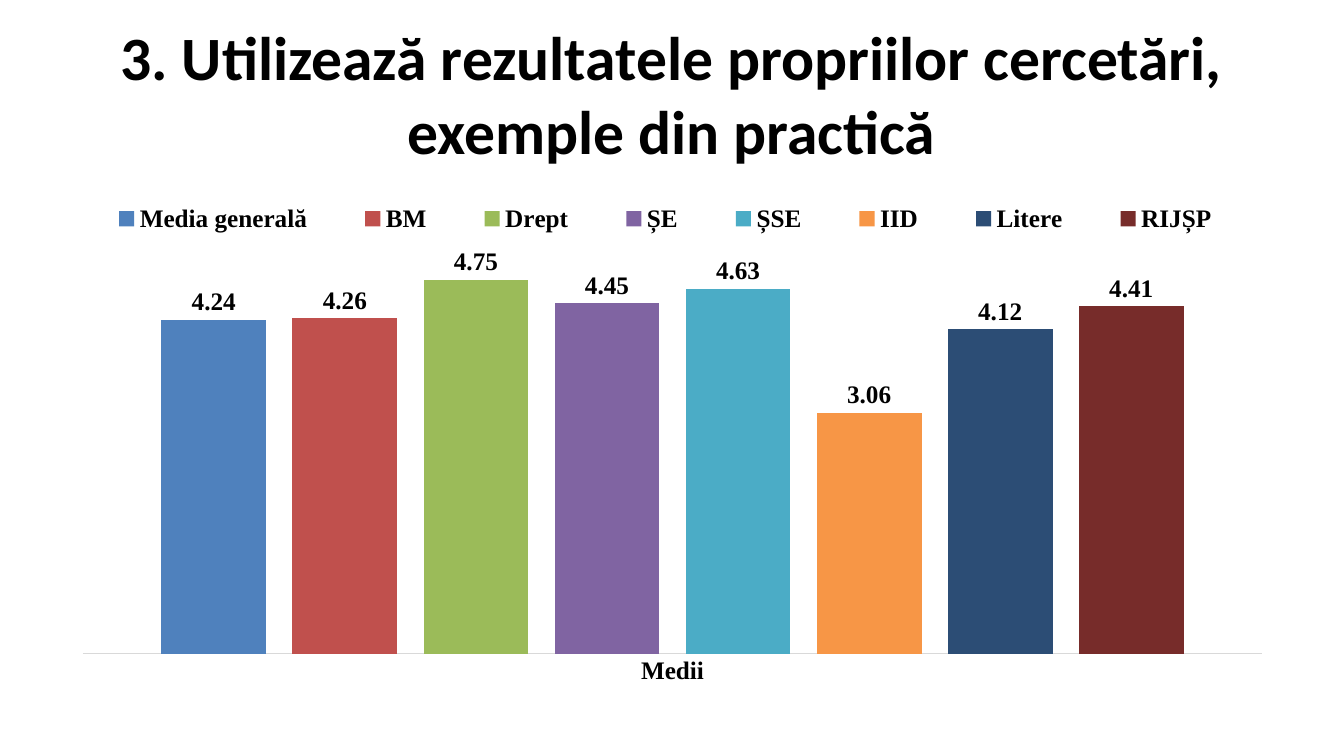
from lxml.etree import SubElement
from pptx import Presentation
from pptx.chart.data import CategoryChartData
from pptx.dml.color import RGBColor
from pptx.enum.chart import XL_CHART_TYPE, XL_LABEL_POSITION, XL_LEGEND_POSITION, XL_TICK_MARK
from pptx.enum.text import MSO_ANCHOR, PP_ALIGN
from pptx.oxml.ns import qn
from pptx.util import Inches, Pt

SLIDE_WIDTH = 13.33
CONTENT_WIDTH = 12
MARGIN = (SLIDE_WIDTH - CONTENT_WIDTH) / 2
BLACK = RGBColor(0x00, 0x00, 0x00)
AXIS_GREY = RGBColor(0xD9, 0xD9, 0xD9)
FACULTY_MEANS = [
    ("Media generală", 4.24, RGBColor(0x4F, 0x81, 0xBD)),
    ("BM", 4.26, RGBColor(0xC0, 0x50, 0x4D)),
    ("Drept", 4.75, RGBColor(0x9B, 0xBB, 0x59)),
    ("ȘE", 4.45, RGBColor(0x80, 0x64, 0xA2)),
    ("ȘSE", 4.63, RGBColor(0x4B, 0xAC, 0xC6)),
    ("IID", 3.06, RGBColor(0xF7, 0x96, 0x46)),
    ("Litere", 4.12, RGBColor(0x2C, 0x4D, 0x75)),
    ("RIJȘP", 4.41, RGBColor(0x77, 0x2C, 0x2A)),
]


def style_font(font, name, size):
    """Make a font bold and black in the given face and size."""
    font.name = name
    font.size = Pt(size)
    font.bold = True
    font.color.rgb = BLACK


def add_text(slide, text, left, top, width, height, *, font="Calibri", size=44,
             align=PP_ALIGN.CENTER, anchor=MSO_ANCHOR.MIDDLE):
    """Add a wrapped text box with one formatted paragraph."""
    frame = slide.shapes.add_textbox(
        Inches(left), Inches(top), Inches(width), Inches(height)).text_frame
    frame.word_wrap = True
    frame.vertical_anchor = anchor
    paragraph = frame.paragraphs[0]
    paragraph.alignment = align
    run = paragraph.add_run()
    run.text = text
    style_font(run.font, font, size)


def place_part(chart, tag, index, **settings):
    """Fix a part of the chart, with its place as fractions of the chart."""
    part = chart.element.find(f".//{qn(tag)}")
    for automatic in part.findall(qn("c:layout")):
        part.remove(automatic)
    layout = SubElement(part, qn("c:layout"))
    part.insert(index, layout)
    manual = SubElement(layout, qn("c:manualLayout"))
    for setting, value in settings.items():
        SubElement(manual, qn(f"c:{setting}")).set("val", str(value))


def style_axes(chart):
    """Show only the category axis, on a scale from zero to five."""
    categories = chart.category_axis
    categories.major_tick_mark = XL_TICK_MARK.NONE
    categories.minor_tick_mark = XL_TICK_MARK.NONE
    categories.format.line.color.rgb = AXIS_GREY
    categories.format.line.width = Pt(0.75)
    style_font(categories.tick_labels.font, "Times New Roman", 18)
    scores = chart.value_axis
    scores.minimum_scale = 0
    scores.maximum_scale = 5
    scores.has_major_gridlines = False
    scores.visible = False


def style_series(series, color):
    """Colour one column and put its value above it."""
    series.format.fill.solid()
    series.format.fill.fore_color.rgb = color
    series.invert_if_negative = False
    labels = series.data_labels
    labels.show_value = True
    labels.number_format = "0.00"
    labels.number_format_is_linked = False
    labels.position = XL_LABEL_POSITION.OUTSIDE_END
    style_font(labels.font, "Times New Roman", 18)


def add_means_chart(slide, left, top, width, height):
    """Add the column chart with one series for each faculty."""
    means = CategoryChartData(number_format="0.00")
    means.categories = ["Medii"]
    for faculty, mean, _ in FACULTY_MEANS:
        means.add_series(faculty, [mean])
    chart = slide.shapes.add_chart(
        XL_CHART_TYPE.COLUMN_CLUSTERED, Inches(left), Inches(top),
        Inches(width), Inches(height), means).chart
    style_font(chart.font, "Times New Roman", 18)
    chart.has_title = False
    chart.has_legend = True
    chart.legend.position = XL_LEGEND_POSITION.TOP
    chart.legend.include_in_layout = False
    style_font(chart.legend.font, "Times New Roman", 18)
    columns = chart.plots[0]
    columns.gap_width = 150
    columns.overlap = -25
    columns.vary_by_categories = False
    for series, (_, _, color) in zip(columns.series, FACULTY_MEANS):
        style_series(series, color)
    style_axes(chart)
    place_part(chart, "c:plotArea", 0, layoutTarget="inner", xMode="edge", yMode="edge",
               x=0.013, y=0.158, w=0.975, h=0.744)
    place_part(chart, "c:legend", 1, xMode="edge", yMode="edge",
               x=0.002, y=0.04, w=0.985, h=0.08)


def main():
    """Build the slide and save it."""
    deck = Presentation()
    deck.slide_width = Inches(SLIDE_WIDTH)
    deck.slide_height = Inches(7.5)
    slide = deck.slides.add_slide(deck.slide_layouts[6])
    add_text(slide, "3. Utilizează rezultatele propriilor cercetări, exemple din practică",
             MARGIN, 0.3, CONTENT_WIDTH, 1.25)
    add_means_chart(slide, MARGIN, 1.75, CONTENT_WIDTH, 5.25)
    deck.save("out.pptx")


if __name__ == "__main__":
    main()
